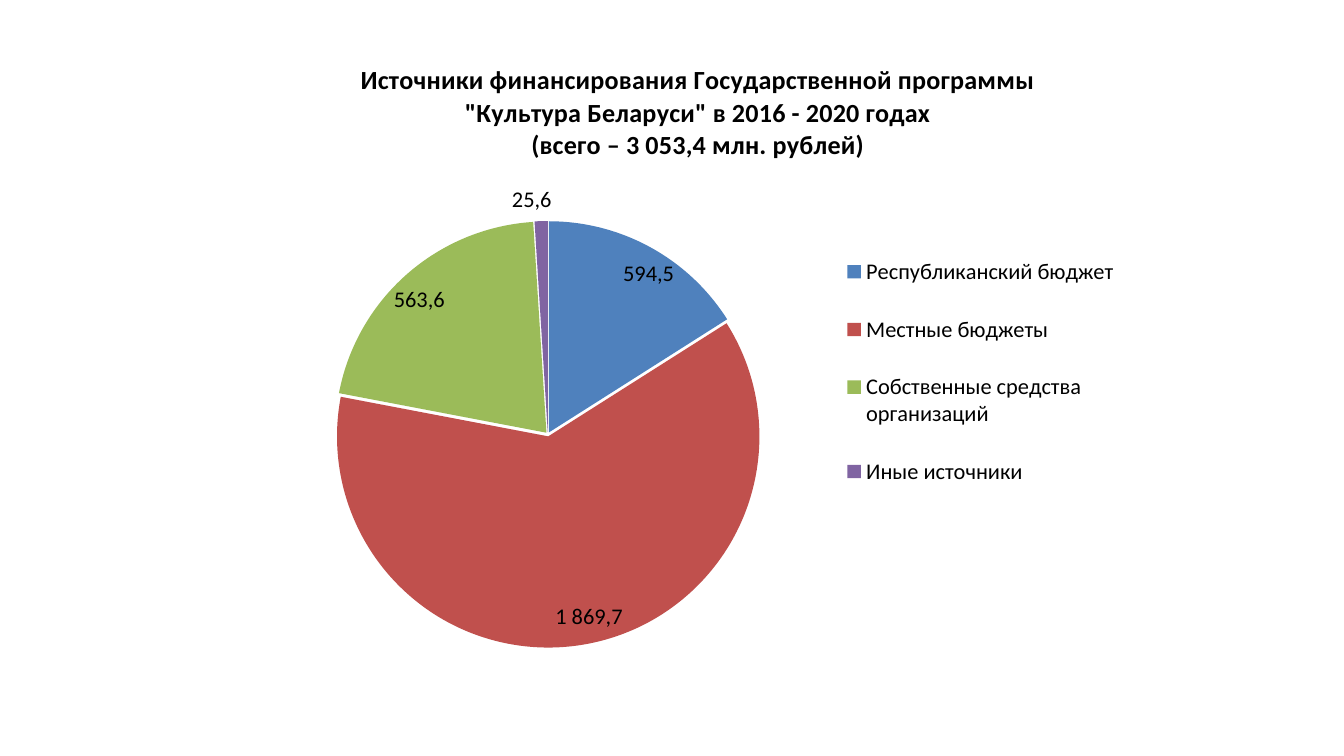
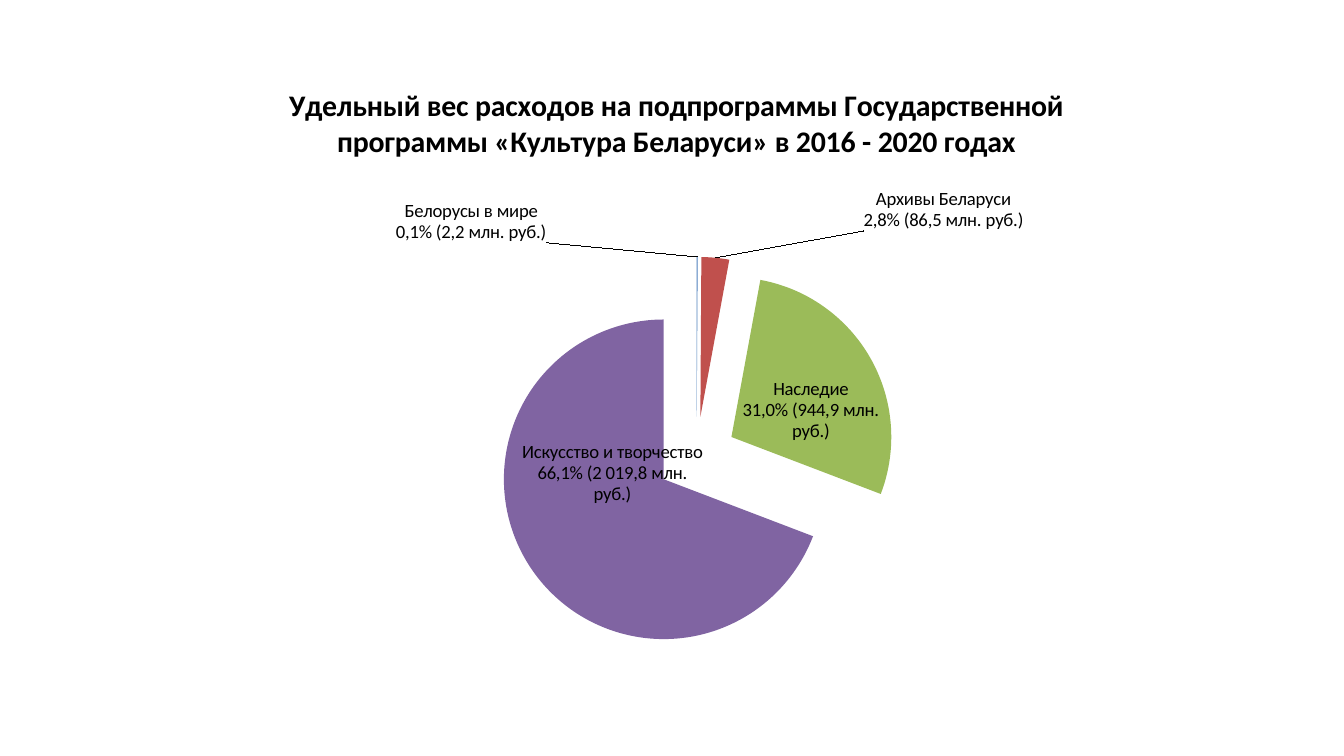
from lxml.etree import SubElement
from pptx import Presentation
from pptx.chart.data import CategoryChartData
from pptx.dml.color import RGBColor
from pptx.enum.chart import XL_CHART_TYPE, XL_LABEL_POSITION, XL_LEGEND_POSITION
from pptx.oxml.ns import qn
from pptx.util import Cm, Pt

FONT = "Calibri"
TEXT_COLOUR = "000000"
SLICE_COLOURS = ["4F81BD", "C0504D", "9BBB59", "8064A2"]
INSIDE = XL_LABEL_POSITION.INSIDE_END
CENTRE = XL_LABEL_POSITION.CENTER
OUTSIDE = XL_LABEL_POSITION.OUTSIDE_END


def colour(value):
    return RGBColor.from_string(value)


def set_font(font, size, bold=False):
    font.name = FONT
    font.size = Pt(size)
    font.bold = bold
    font.color.rgb = colour(TEXT_COLOUR)


def write_text(frame, text, size, bold=False):
    frame.text = text
    for paragraph in frame.paragraphs:
        set_font(paragraph.font, size, bold)


def set_layout(parent, after=None, edges=False, inner=False, **fractions):
    """Place a chart part by fractions of the chart; edges measures x and y from the chart edge."""
    old = parent.find(qn("c:layout"))
    if old is not None:
        parent.remove(old)
    layout = SubElement(parent, qn("c:layout"))
    parent.insert(0 if after is None else parent.index(parent.find(qn(after))) + 1, layout)
    manual = SubElement(layout, qn("c:manualLayout"))
    if inner:
        SubElement(manual, qn("c:layoutTarget")).set("val", "inner")
    if edges:
        for mode in ("xMode", "yMode"):
            SubElement(manual, qn(f"c:{mode}")).set("val", "edge")
    for name, value in fractions.items():
        SubElement(manual, qn(f"c:{name}")).set("val", str(value))


def add_pie(page, frame, categories, values, explosion, plot_area):
    data = CategoryChartData()
    data.categories = categories
    data.add_series("Series 1", values)
    chart = page.shapes.add_chart(
        XL_CHART_TYPE.PIE, *(Cm(length) for length in frame), data).chart
    set_font(chart.font, 10)
    chart.has_legend = False
    plot = chart.plots[0]
    plot.vary_by_categories = True
    series = plot.series[0]
    for index, value in enumerate(SLICE_COLOURS):
        fill = series.points[index].format.fill
        fill.solid()
        fill.fore_color.rgb = colour(value)
    element = series._element
    burst = SubElement(element, qn("c:explosion"))
    burst.set("val", str(explosion))
    element.find(qn("c:dPt")).addprevious(burst)
    x, y, w, h = plot_area
    set_layout(chart._chartSpace.find(".//" + qn("c:plotArea")),
               edges=True, inner=True, x=x, y=y, w=w, h=h)
    return chart


def add_title(chart, text, size, x, y):
    chart.has_title = True
    title = chart.chart_title
    write_text(title.text_frame, text, size, bold=True)
    set_layout(title._element, after="c:tx", edges=True, x=x, y=y)


def add_legend(chart, size, x, y, w, h):
    chart.has_legend = True
    legend = chart.legend
    legend.position = XL_LEGEND_POSITION.RIGHT
    legend.include_in_layout = False
    set_font(legend.font, size)
    set_layout(legend._element, after="c:legendPos", edges=True, x=x, y=y, w=w, h=h)


def add_labels(chart, labels, size, number_format, with_category=False):
    """Label each slice with (text, position, shift), where shift is a pair of chart fractions."""
    series = chart.plots[0].series[0]
    shared = series.data_labels
    shared.show_value = False
    shared.show_percentage = True
    shared.show_category_name = with_category
    shared.number_format = number_format
    shared.number_format_is_linked = False
    set_font(shared.font, size)
    for index, (text, position, _) in enumerate(labels):
        label = series.points[index].data_label
        write_text(label.text_frame, text, size)
        label.position = position
    flags = {"c:showVal": False, "c:showPercent": True, "c:showCatName": with_category}
    for element, (_, _, shift) in zip(series._element.iter(qn("c:dLbl")), labels):
        for name, shown in flags.items():
            element.find(qn(name)).set("val", str(int(shown)))
        set_layout(element, after="c:idx", x=shift[0], y=shift[1])


def build_sources(page):
    chart = add_pie(
        page, (4.5, 0.74, 17.22, 11.86),
        ["Республиканский бюджет", "Местные бюджеты",
         "Собственные средства организаций", "Иные источники"],
        [16, 62, 21, 1], 1, (0.1, 0.29, 0.48, 0.68))
    add_title(chart, 'Источники финансирования Государственной программы '
              '"Культура Беларуси" в 2016 - 2020 годах\n'
              '(всего – 3 053,4 млн. рублей)', 14, 0.13, 0.03)
    add_legend(chart, 12, 0.66, 0.3, 0.31, 0.46)
    add_labels(chart, [
        ("594,5", INSIDE, (0.03, 0.01)),
        ("1 869,7", INSIDE, (0.04, -0.01)),
        ("563,6", INSIDE, (-0.02, 0.01)),
        ("25,6", OUTSIDE, (-0.01, 0)),
    ], 12, "#,##0.0")


def build_shares(page):
    chart = add_pie(
        page, (3.5, 1.14, 18.59, 11.99),
        ["Беларусы в мире", "Архивы Беларуси", "Наследие", "Искусство и творчество"],
        [0.1, 2.8, 27.9, 69.2], 25, (0.31, 0.31, 0.42, 0.63))
    add_title(chart, "Удельный вес расходов на подпрограммы Государственной "
              "программы «Культура Беларуси» в 2016 - 2020 годах", 16, 0.1, 0.03)
    add_labels(chart, [
        ("Белорусы в мире\n0,1% (2,2 млн. руб.)", OUTSIDE, (-0.23, -0.01)),
        ("Архивы Беларуси\n2,8% (86,5 млн. руб.)", OUTSIDE, (0.15, -0.03)),
        ("Наследие\n31,0% (944,9 млн. руб.)", CENTRE, (0.01, 0.02)),
        ("Искусство и творчество\n66,1% (2 019,8 млн.\nруб.)", OUTSIDE, (0.18, -0.21)),
    ], 10, "0.0%", with_category=True)


def main():
    deck = Presentation()
    deck.slide_width, deck.slide_height = Cm(25.4), Cm(14.29)
    for build in (build_sources, build_shares):
        build(deck.slides.add_slide(deck.slide_layouts[6]))
    deck.save("out.pptx")


if __name__ == "__main__":
    main()
